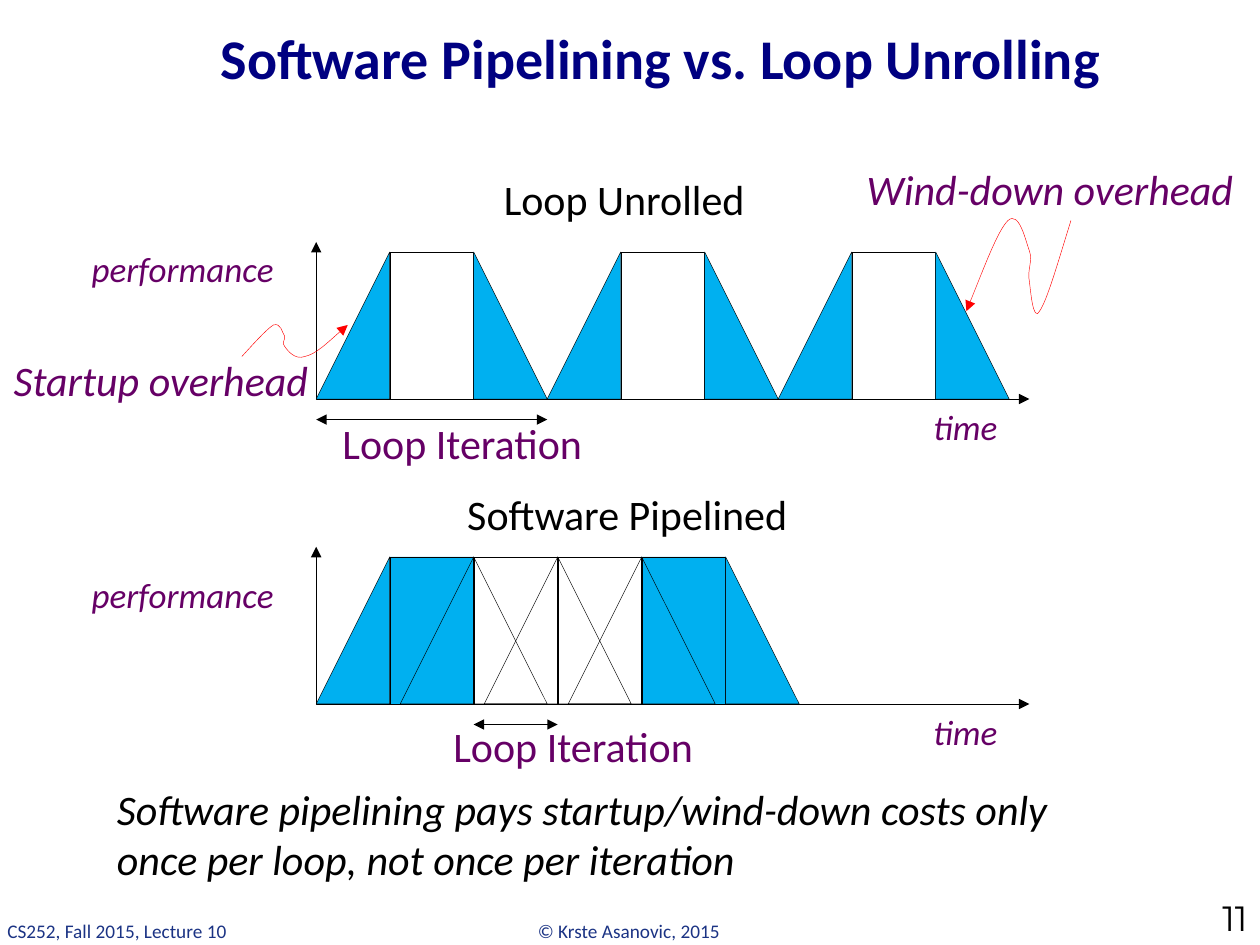
from lxml import etree
from pptx import Presentation
from pptx import util as u
from pptx.dml.color import RGBColor
from pptx.enum import shapes, text
from pptx.oxml.ns import qn

BLACK = RGBColor(0x00, 0x00, 0x00)
NAVY = RGBColor(0x00, 0x00, 0x81)
FOOTER_BLUE = RGBColor(0x1B, 0x33, 0x84)
PURPLE = RGBColor(0x66, 0x00, 0x66)
CYAN = RGBColor(0x00, 0xB0, 0xF0)
RED = RGBColor(0xFF, 0x00, 0x00)

RAMP, FLAT, HEIGHT = 7 / 12, 2 / 3, 7 / 6
PERIOD = 2 * RAMP + FLAT
ORIGIN, AXIS_END = 2.51, 8.17
UNROLLED_TOP, PIPELINED_TOP = 2.0, 4.42


class Diagram:
    font = "Calibri"
    line_width = u.Pt(0.25)

    def __init__(self, slide):
        self.s = slide

    def label(self, words, x, y, w, h, size, color=BLACK, bold=False, italic=False,
              align=text.PP_ALIGN.LEFT, anchor=text.MSO_ANCHOR.MIDDLE, wrap=False, font=None):
        sp = self.s.shapes.add_textbox(*map(u.Inches, (x, y, w, h)))
        tf = sp.text_frame
        tf.word_wrap = wrap
        tf.vertical_anchor = anchor
        if not wrap:
            tf.auto_size = text.MSO_AUTO_SIZE.SHAPE_TO_FIT_TEXT
        p = tf.paragraphs[0]
        p.text = words
        p.alignment = align
        p.font.name = font or self.font
        p.font.size = u.Pt(size)
        p.font.color.rgb = color
        p.font.bold = bold
        p.font.italic = italic

    def paint(self, sp, fill=None, color=BLACK):
        sp.shadow.inherit = False
        if fill is None:
            sp.fill.background()
        else:
            sp.fill.solid()
            sp.fill.fore_color.rgb = fill
        sp.line.color.rgb = color
        sp.line.width = self.line_width

    def arrowheads(self, sp, *ends):
        ln = sp.line._get_or_add_ln()
        for end in ends:
            etree.SubElement(ln, qn(f"a:{end}"), type="triangle")

    def rect(self, x, y, w, h, fill=None):
        sp = self.s.shapes.add_shape(
            shapes.MSO_SHAPE.RECTANGLE, *map(u.Inches, (x, y, w, h)))
        self.paint(sp, fill)

    def outline(self, points, close=False, fill=None, color=BLACK):
        start, *rest = [(u.Inches(x), u.Inches(y)) for x, y in points]
        builder = self.s.shapes.build_freeform(*start)
        builder.add_line_segments(rest, close=close)
        sp = builder.convert_to_shape()
        self.paint(sp, fill, color)
        return sp

    def curve(self, points):
        sp = self.outline(points, color=RED)
        segments = list(sp._element.iter(qn("a:lnTo")))
        for i in range(0, len(segments), 3):
            bezier = etree.Element(qn("a:cubicBezTo"))
            segments[i].addprevious(bezier)
            for segment in segments[i:i + 3]:
                bezier.append(segment[0])
                segment.getparent().remove(segment)
        self.arrowheads(sp, "tailEnd")

    def span(self, x1, x2, y):
        sp = self.s.shapes.add_connector(
            shapes.MSO_CONNECTOR.STRAIGHT, *map(u.Inches, (x1, y, x2, y)))
        sp.line.color.rgb = BLACK
        sp.line.width = self.line_width
        self.arrowheads(sp, "headEnd", "tailEnd")
        etree.SubElement(sp._element.spPr, qn("a:effectLst"))

    def axes(self, top):
        base = top + HEIGHT
        sp = self.outline([(ORIGIN, top - 0.08), (ORIGIN, base), (AXIS_END, base)])
        self.arrowheads(sp, "headEnd", "tailEnd")
        self.label("time", 7.31, base, 0.73, 0.44, 20, PURPLE, italic=True)

    def iteration(self, x, top, rise=None, flat=None, fall=None):
        left, right, base = x + RAMP, x + RAMP + FLAT, top + HEIGHT
        self.rect(left, top, FLAT, HEIGHT, flat)
        self.outline([(left, top), (left, base), (x, base)], True, rise)
        self.outline([(right, top), (right, base), (right + RAMP, base)], True, fall)


def main():
    prs = Presentation()
    prs.slide_width, prs.slide_height = u.Inches(10), u.Inches(7.5)
    d = Diagram(prs.slides.add_slide(prs.slide_layouts[6]))

    d.label("© Krste Asanovic, 2015", 4.17, 7.25, 1.67, 0.29, 11, FOOTER_BLUE,
            anchor=text.MSO_ANCHOR.TOP)
    d.label("CS252, Fall 2015, Lecture 10", -0.04, 7.25, 1.96, 0.29, 11, FOOTER_BLUE,
            anchor=text.MSO_ANCHOR.TOP)
    d.label("Software Pipelining vs. Loop Unrolling", 1.33, 0.08, 7.83, 0.75, 32, NAVY,
            bold=True, align=text.PP_ALIGN.CENTER, wrap=True)
    d.label("11", 9.08, 7.24, 0.92, 0.26, 20, align=text.PP_ALIGN.RIGHT,
            anchor=text.MSO_ANCHOR.BOTTOM, wrap=True, font="Montserrat")

    d.axes(UNROLLED_TOP)
    for i in range(3):
        d.iteration(ORIGIN + i * PERIOD, UNROLLED_TOP, rise=CYAN, fall=CYAN)

    d.axes(PIPELINED_TOP)
    fills = {0: {"rise": CYAN, "flat": CYAN}, 3: {"flat": CYAN, "fall": CYAN}}
    for i in (0, 1, 3, 2):
        d.iteration(ORIGIN + i * FLAT, PIPELINED_TOP, **fills.get(i, {}))

    for y in (1.91, 4.5):
        d.label("performance", 0.63, y, 1.73, 0.44, 20, PURPLE, italic=True)
    d.label("Loop Unrolled", 3.9, 1.33, 2.14, 0.5, 24)
    d.label("Software Pipelined", 3.61, 3.83, 2.78, 0.5, 24)
    d.label("Startup overhead", 0.01, 2.76, 2.65, 0.5, 24, PURPLE, italic=True)
    d.label("Wind-down overhead", 6.78, 1.25, 3.22, 0.5, 24, PURPLE, italic=True)

    d.span(ORIGIN, ORIGIN + PERIOD, 3.33)
    d.label("Loop Iteration", 2.62, 3.26, 2.14, 0.5, 24, PURPLE)
    first_flat = ORIGIN + RAMP + FLAT
    d.span(first_flat, first_flat + FLAT, 5.75)
    d.label("Loop Iteration", 3.5, 5.67, 2.83, 0.5, 24, PURPLE, wrap=True)
    d.label("Software pipelining pays startup/wind-down costs only once per loop, "
            "not once per iteration", 0.83, 6.16, 8.17, 0.91, 24, italic=True, wrap=True)

    d.curve([(1.92, 2.83), (2.02, 2.72), (2.12, 2.61), (2.17, 2.58),
             (2.23, 2.56), (2.24, 2.64), (2.26, 2.67),
             (2.27, 2.69), (2.23, 2.72), (2.26, 2.75),
             (2.28, 2.78), (2.34, 2.86), (2.42, 2.83),
             (2.51, 2.81), (2.63, 2.69), (2.76, 2.58)])
    d.curve([(8.5, 1.75), (8.4, 2.07), (8.31, 2.39), (8.25, 2.47),
             (8.2, 2.56), (8.18, 2.31), (8.17, 2.23),
             (8.15, 2.15), (8.2, 2.07), (8.17, 1.99),
             (8.14, 1.91), (8.09, 1.67), (8, 1.75),
             (7.92, 1.83), (7.8, 2.15), (7.67, 2.47)])
    prs.save("out.pptx")


if __name__ == "__main__":
    main()
